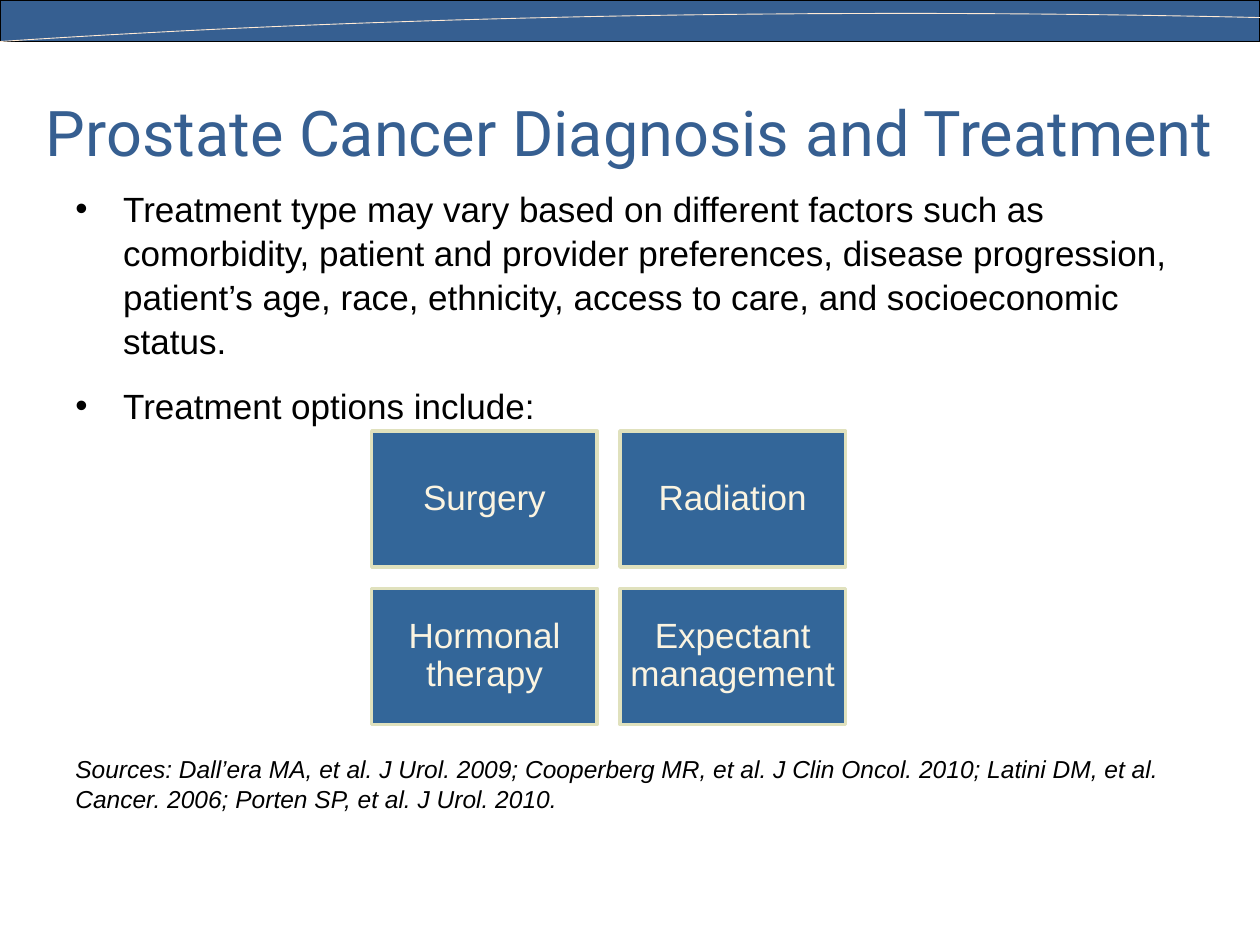
"""Build the slide on prostate cancer diagnosis and treatment."""
from dataclasses import dataclass

from lxml import etree
from pptx import Presentation
from pptx import util as u
from pptx.dml.color import RGBColor
from pptx.enum import shapes, text
from pptx.oxml import ns

BLUE = RGBColor(0x36, 0x5F, 0x91)
TILE_BLUE = RGBColor(0x33, 0x66, 0x99)
TILE_BORDER = RGBColor(0xE0, 0xE1, 0xBD)
CREAM = RGBColor(0xFB, 0xF4, 0xE1)
PEACH = RGBColor(0xFF, 0xEA, 0xD5)
BLACK = RGBColor(0, 0, 0)
INDENT = u.Inches(0.38)


@dataclass(frozen=True)
class Box:
    left: float
    top: float
    width: float
    height: float

    def lengths(self) -> tuple:
        return tuple(u.Inches(v) for v in (self.left, self.top, self.width, self.height))


@dataclass(frozen=True)
class Style:
    size: float
    color: RGBColor
    font: str = "Arial"
    italic: bool = False


TITLE = Style(36, BLUE, "Roboto")
BODY = Style(20, BLACK)
SOURCE = Style(14, BLACK, italic=True)
TILE = Style(20, CREAM)

BULLETS = (
    "Treatment type may vary based on different factors such as comorbidity, patient and "
    "provider preferences, disease progression, patient’s age, race, ethnicity, access to "
    "care, and socioeconomic status.",
    "Treatment options include:",
)
SOURCES = (
    "Sources: Dall’era MA, et al. J Urol. 2009; Cooperberg MR, et al. J Clin Oncol. 2010; "
    "Latini DM, et al. Cancer. 2006; Porten SP, et al. J Urol. 2010."
)
OPTIONS = ("Surgery", "Radiation", "Hormonal therapy", "Expectant management")


def add_run(paragraph, words: str, style: Style) -> None:
    run = paragraph.add_run()
    run.text = words
    run.font.size = u.Pt(style.size)
    run.font.name = style.font
    run.font.italic = style.italic
    run.font.color.rgb = style.color


def add_bullet(paragraph) -> None:
    properties = paragraph._p.get_or_add_pPr()
    properties.set("marL", str(INDENT))
    properties.set("indent", str(-INDENT))
    etree.SubElement(properties, ns.qn("a:buFont"), typeface="Arial")
    etree.SubElement(properties, ns.qn("a:buChar"), char="•")


def add_text(slide, box: Box, paragraphs: tuple, style: Style, bulleted: bool = False):
    frame = slide.shapes.add_textbox(*box.lengths()).text_frame
    frame.word_wrap = True
    for index, words in enumerate(paragraphs):
        paragraph = frame.add_paragraph() if index else frame.paragraphs[0]
        if bulleted:
            add_bullet(paragraph)
        paragraph.line_spacing = 1.05
        paragraph.space_before = u.Pt(6 if index else 0)
        paragraph.space_after = u.Pt(6)
        add_run(paragraph, words, style)
    return frame


def add_rectangle(slide, box: Box, fill: RGBColor, line: RGBColor, weight: float):
    shape = slide.shapes.add_shape(shapes.MSO_SHAPE.RECTANGLE, *box.lengths())
    shape.shadow.inherit = False
    shape.fill.solid()
    shape.fill.fore_color.rgb = fill
    shape.line.color.rgb = line
    shape.line.width = u.Pt(weight)
    return shape


def add_tile(slide, box: Box, label: str) -> None:
    frame = add_rectangle(slide, box, TILE_BLUE, TILE_BORDER, 2).text_frame
    frame.word_wrap = True
    frame.vertical_anchor = text.MSO_ANCHOR.MIDDLE
    frame.margin_left = frame.margin_right = u.Inches(0.08)
    frame.margin_top = frame.margin_bottom = u.Inches(0.08)
    paragraph = frame.paragraphs[0]
    paragraph.alignment = text.PP_ALIGN.CENTER
    paragraph.line_spacing = 0.9
    add_run(paragraph, label, TILE)


def bezier(controls: tuple, t: float) -> float:
    a, b, c, d = controls
    s = 1 - t
    return a * s**3 + 3 * b * s**2 * t + 3 * c * s * t**2 + d * t**3


def add_banner_curve(slide, steps: int = 40) -> None:
    xs, ys = (10, 7.44, 3.79, 0), (0.14, 0.08, 0.08, 0.33)
    points = [
        (u.Inches(bezier(xs, i / steps)), u.Inches(bezier(ys, i / steps)))
        for i in range(steps + 1)
    ]
    builder = slide.shapes.build_freeform(*points[0])
    builder.add_line_segments(points[1:], close=False)
    curve = builder.convert_to_shape()
    curve.shadow.inherit = False
    curve.fill.background()
    curve.line.color.rgb = PEACH
    curve.line.width = u.Pt(0.5)


def main() -> None:
    presentation = Presentation()
    presentation.slide_width, presentation.slide_height = u.Inches(10), u.Inches(7.5)
    slide = presentation.slides.add_slide(presentation.slide_layouts[6])

    add_rectangle(slide, Box(0, 0, 10, 0.33), BLUE, BLACK, 0.75)
    add_banner_curve(slide)

    title = add_text(slide, Box(0.17, 0.42, 9.65, 1.25), (), TITLE)
    title.vertical_anchor = text.MSO_ANCHOR.MIDDLE
    title.paragraphs[0].alignment = text.PP_ALIGN.CENTER
    add_run(title.paragraphs[0], "Prostate Cancer Diagnosis and Treatment", TITLE)

    add_text(slide, Box(0.5, 1.42, 9, 2), BULLETS, BODY, bulleted=True)
    for index, label in enumerate(OPTIONS):
        row, column = divmod(index, 2)
        add_tile(slide, Box(2.95 + 1.97 * column, 3.42 + 1.25 * row, 1.79, 1.08), label)
    add_text(slide, Box(0.5, 5.92, 9, 0.6), (SOURCES,), SOURCE)

    presentation.save("out.pptx")


if __name__ == "__main__":
    main()
